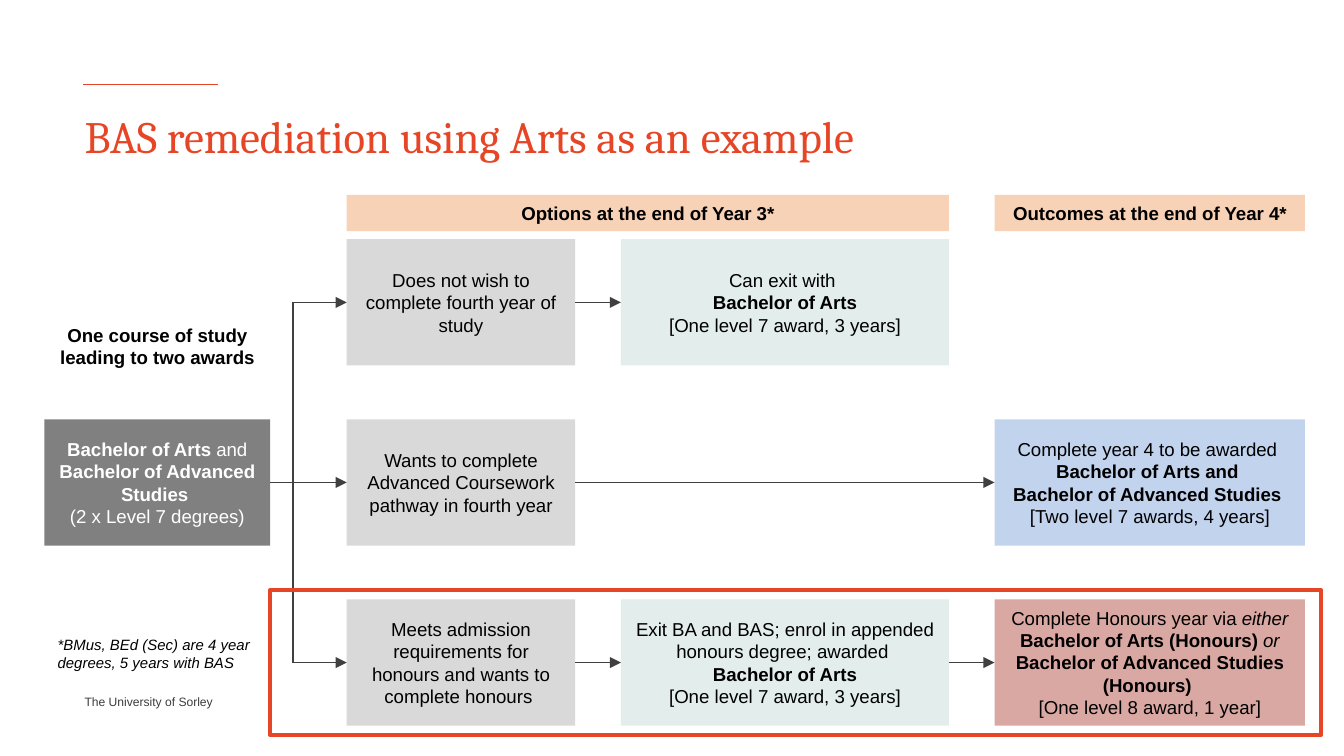
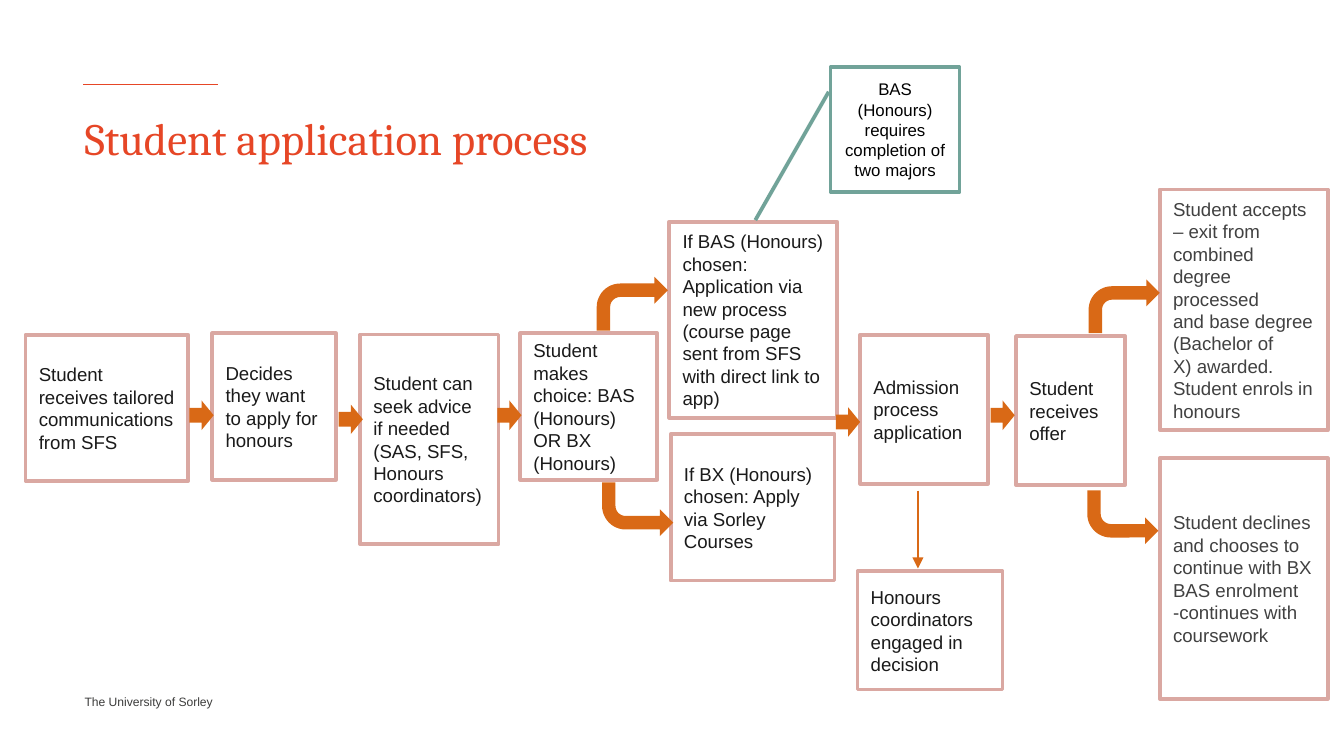
from lxml.etree import SubElement
from pptx import Presentation
from pptx.dml.color import RGBColor
from pptx.enum.shapes import MSO_CONNECTOR, MSO_SHAPE
from pptx.enum.text import MSO_ANCHOR, PP_ALIGN
from pptx.oxml.ns import qn
from pptx.util import Inches, Pt

COLORS = {
    "accent": "E64626", "footer": "3C3C3B", "black": "000000", "white": "FFFFFF",
    "connector": "404040", "start": "808080", "option": "D9D9D9", "exit": "E3EDEB",
    "heading": "F8D2B7", "coursework": "C2D3EE", "honours": "DAA8A2",
    "step": "1A1A1A", "result": "414141", "arrow": "D96916", "callout": "71A399",
}
FOOTER = "The University of Sorley"
NO_BREAK_MARK, NO_BREAK_SPACE = "~", chr(160)

ROW_TOPS = [1.78 + 1.34 * row for row in range(3)]
ROW_HEIGHT = 0.94
COLUMNS = {"start": (0.33, 1.68), "option": (2.58, 1.7), "exit": (4.62, 2.44), "outcome": (7.4, 2.31)}
TRUNK_X = 2.18
HEADING_TOP, HEADING_HEIGHT = 1.45, 0.27

HEADINGS = [
    ("Options at the end of Year 3*", "option", "exit"),
    ("Outcomes at the end of Year 4*", "outcome", "outcome"),
]
PATHWAY_BOXES = [
    ("start", 1, "start", [
        [("Bachelor of Arts", "b"), (" and ", ""), ("Bachelor of Advanced Studies ", "b")],
        [("(2 x Level 7 degrees)", "")],
    ]),
    ("option", 0, "option", [[("Does not wish to complete fourth year of study", "")]]),
    ("option", 1, "option", [[("Wants to complete Advanced Coursework pathway in fourth year", "")]]),
    ("option", 2, "option", [[("Meets admission requirements for honours and wants to complete honours ", "")]]),
    ("exit", 0, "exit", [
        [("Can exit with ", "")],
        [("Bachelor of Arts", "b")],
        [("[One level 7 award, 3 years]", "")],
    ]),
    ("exit", 2, "exit", [
        [("Exit BA and BAS; enrol in appended honours degree; awarded ", "")],
        [("Bachelor of Arts", "b")],
        [("[One level 7 award, 3 years]", "")],
    ]),
    ("outcome", 1, "coursework", [
        [("Complete year 4 to be awarded ", "")],
        [("Bachelor of Arts and ", "b")],
        [("Bachelor of Advanced Studies ", "b")],
        [("[Two level 7 awards, 4 years]", "")],
    ]),
    ("outcome", 2, "honours", [
        [("Complete Honours year via ", ""), ("either ", "i"), ("Bachelor of Arts (Honours) ", "b"),
         ("or", "i"), (" Bachelor of Advanced Studies (Honours) ", "b")],
        [("[One level 8 award, 1 year]", "")],
    ]),
]
PATHWAY_LINKS = [
    (("start", 1), ("option", 1)),
    (("option", 0), ("exit", 0)),
    (("option", 1), ("outcome", 1)),
    (("option", 2), ("exit", 2)),
    (("exit", 2), ("outcome", 2)),
]
COURSE_NOTE = "One course of study leading to two awards"
DEGREE_NOTE = "*BMus, BEd (Sec) are 4 year degrees, 5 years with BAS"
HONOURS_FRAME = (2.01, 4.39, 7.82, 1.08)

STEPS = [
    ("Student receives~tailored communications from SFS", (0.19, 2.49, 1.21, 1.09), "step"),
    ("Decides they want to apply for honours", (1.58, 2.48, 0.92, 1.09), "step"),
    ("Student can seek advice if needed (SAS, SFS, Honours coordinators)", (2.68, 2.49, 1.03, 1.56), "step"),
    ("Student makes choice: BAS (Honours) OR BX (Honours)", (3.87, 2.48, 1.02, 1.09), "step"),
    ("If BAS (Honours) chosen: Application via new process (course page sent from SFS with~direct link to app)",
     (4.98, 1.65, 1.25, 1.46), "step"),
    ("If BX (Honours) chosen: Apply via Sorley Courses", (4.99, 3.23, 1.22, 1.09), "step"),
    ("Admission process application", (6.4, 2.49, 0.95, 1.11), "step"),
    ("Honours coordinators engaged in decision", (6.38, 4.25, 1.08, 0.88), "step"),
    ("Student receives offer", (7.56, 2.5, 0.81, 1.11), "step"),
    ("Student accepts – exit from combined degree processed and~base degree (Bachelor of X)~awarded. "
     "Student enrols in honours", (8.63, 1.41, 1.25, 1.79), "result"),
    ("Student declines and chooses to continue with BX BAS enrolment -continues with coursework",
     (8.63, 3.41, 1.25, 1.79), "result"),
]
STEP_ARROWS = [(1.41, 2.98), (2.52, 3.01), (3.7, 2.98), (6.22, 3.03), (7.37, 2.98)]
BRANCH_ARROWS = [(4.44, 2.06, False), (8.1, 2.08, False), (4.48, 3.59, True), (8.09, 3.65, True)]
MAJORS_NOTE = "BAS (Honours) requires completion of two majors"
MAJORS_BOX = (6.18, 0.5, 0.96, 0.93)
MAJORS_POINTER = (0.197, -0.014, 1.224, -0.583)


def rgb(name):
    return RGBColor.from_string(COLORS[name])


def write(shape, paragraphs, color="black", size=10, align=PP_ALIGN.CENTER,
          anchor=MSO_ANCHOR.MIDDLE, face="Arial", inset=None, wrap=True):
    frame = shape.text_frame
    frame.word_wrap = wrap
    frame.vertical_anchor = anchor
    if inset is not None:
        frame.margin_left = frame.margin_right = frame.margin_top = frame.margin_bottom = Inches(inset)
    for index, runs in enumerate(paragraphs):
        paragraph = frame.add_paragraph() if index else frame.paragraphs[0]
        paragraph.alignment = align
        font = paragraph.font
        font.name, font.size = face, Pt(size)
        font.color.rgb = rgb(color)
        for text, style in runs:
            run = paragraph.add_run()
            run.text = text.replace(NO_BREAK_MARK, NO_BREAK_SPACE)
            target = font if len(runs) == 1 else run.font
            target.bold, target.italic = style == "b", style == "i"


def add_box(slide, bounds, fill=None, line=None, kind=MSO_SHAPE.RECTANGLE):
    box = slide.shapes.add_shape(kind, *map(Inches, bounds))
    box.shadow.inherit = False
    if fill:
        box.fill.solid()
        box.fill.fore_color.rgb = rgb(fill)
    else:
        box.fill.background()
    if line:
        box.line.color.rgb = rgb(line)
        box.line.width = Pt(2)
    else:
        box.line.fill.background()
    return box


def add_note(slide, bounds, text, style="", **look):
    note = slide.shapes.add_textbox(*map(Inches, bounds))
    write(note, [[(text, style)]], anchor=MSO_ANCHOR.TOP, **look)


def add_line(slide, start, end, color="connector", arrow=True):
    line = slide.shapes.add_connector(MSO_CONNECTOR.STRAIGHT, *map(Inches, start + end))
    line.line.color.rgb = rgb(color)
    line.line.width = Pt(0.75)
    properties = line._element.spPr
    if arrow:
        SubElement(properties.get_or_add_ln(), qn("a:tailEnd"), type="triangle")
    SubElement(properties, qn("a:effectLst"))
    return line


def add_titled_slide(deck, title, top):
    slide = deck.slides.add_slide(deck.slide_layouts[5])
    heading = slide.shapes.title
    heading.left, heading.top, heading.width, heading.height = map(Inches, (0.63, top, 8.74, 0.4))
    write(heading, [[(title, "")]], "accent", 24, PP_ALIGN.LEFT, face="Cambria", inset=0)
    add_line(slide, (1.62, 0.63), (0.62, 0.63), "accent", arrow=False)
    add_note(slide, (0.63, 5.17, 1.03, 0.13), FOOTER, color="footer", size=6.5,
             align=PP_ALIGN.LEFT, inset=0, wrap=False)
    return slide


def build_pathways(deck):
    slide = add_titled_slide(deck, "BAS remediation using Arts as an example", 0.81)
    for text, first, last in HEADINGS:
        left = COLUMNS[first][0]
        width = sum(COLUMNS[last]) - left
        heading = add_box(slide, (left, HEADING_TOP, width, HEADING_HEIGHT), "heading")
        write(heading, [[(text, "b")]])

    boxes = {}
    for column, row, fill, paragraphs in PATHWAY_BOXES:
        left, width = COLUMNS[column]
        box = add_box(slide, (left, ROW_TOPS[row], width, ROW_HEIGHT), fill)
        write(box, paragraphs, "white" if column == "start" else "black")
        boxes[column, row] = box

    middles = [top + ROW_HEIGHT / 2 for top in ROW_TOPS]
    for source, target in PATHWAY_LINKS:
        y = middles[source[1]]
        link = add_line(slide, (sum(COLUMNS[source[0]]), y), (COLUMNS[target[0]][0], y))
        link.begin_connect(boxes[source], 3)
        link.end_connect(boxes[target], 1)
    add_line(slide, (TRUNK_X, middles[0]), (TRUNK_X, middles[2]), arrow=False)
    for row in (0, 2):
        branch = add_line(slide, (TRUNK_X, middles[row]), (COLUMNS["option"][0], middles[row]))
        branch.end_connect(boxes["option", row], 1)

    add_note(slide, (0.33, 2.36, 1.68, 0.44), COURSE_NOTE, "b")
    add_note(slide, (0.33, 4.68, 1.72, 0.37), DEGREE_NOTE, "i", size=8, align=PP_ALIGN.LEFT)
    add_box(slide, HONOURS_FRAME, line="accent")


def build_process(deck):
    slide = add_titled_slide(deck, "Student application process", 0.82)
    for text, bounds, color in STEPS:
        write(add_box(slide, bounds, "white", "honours"), [[(text, "")]], color, align=PP_ALIGN.LEFT)
    for left, top in STEP_ARROWS:
        add_box(slide, (left, top, 0.18, 0.22), "arrow", kind=MSO_SHAPE.RIGHT_ARROW)
    for left, top, downward in BRANCH_ARROWS:
        branch = add_box(slide, (left, top, 0.53, 0.4), "arrow", kind=MSO_SHAPE.BENT_ARROW)
        if downward:
            branch._element.spPr.xfrm.set("flipV", "1")
    add_line(slide, (6.83, 3.65), (6.83, 4.23), "arrow")
    callout = add_box(slide, MAJORS_BOX, line="callout", kind=MSO_SHAPE.LINE_CALLOUT_1)
    for index, value in enumerate(MAJORS_POINTER):
        callout.adjustments[index] = value
    write(callout, [[(MAJORS_NOTE, "")]], size=9)


def main():
    deck = Presentation()
    deck.slide_width = Inches(10)
    deck.slide_height = deck.slide_width * 9 // 16
    build_pathways(deck)
    build_process(deck)
    deck.save("out.pptx")


if __name__ == "__main__":
    main()
